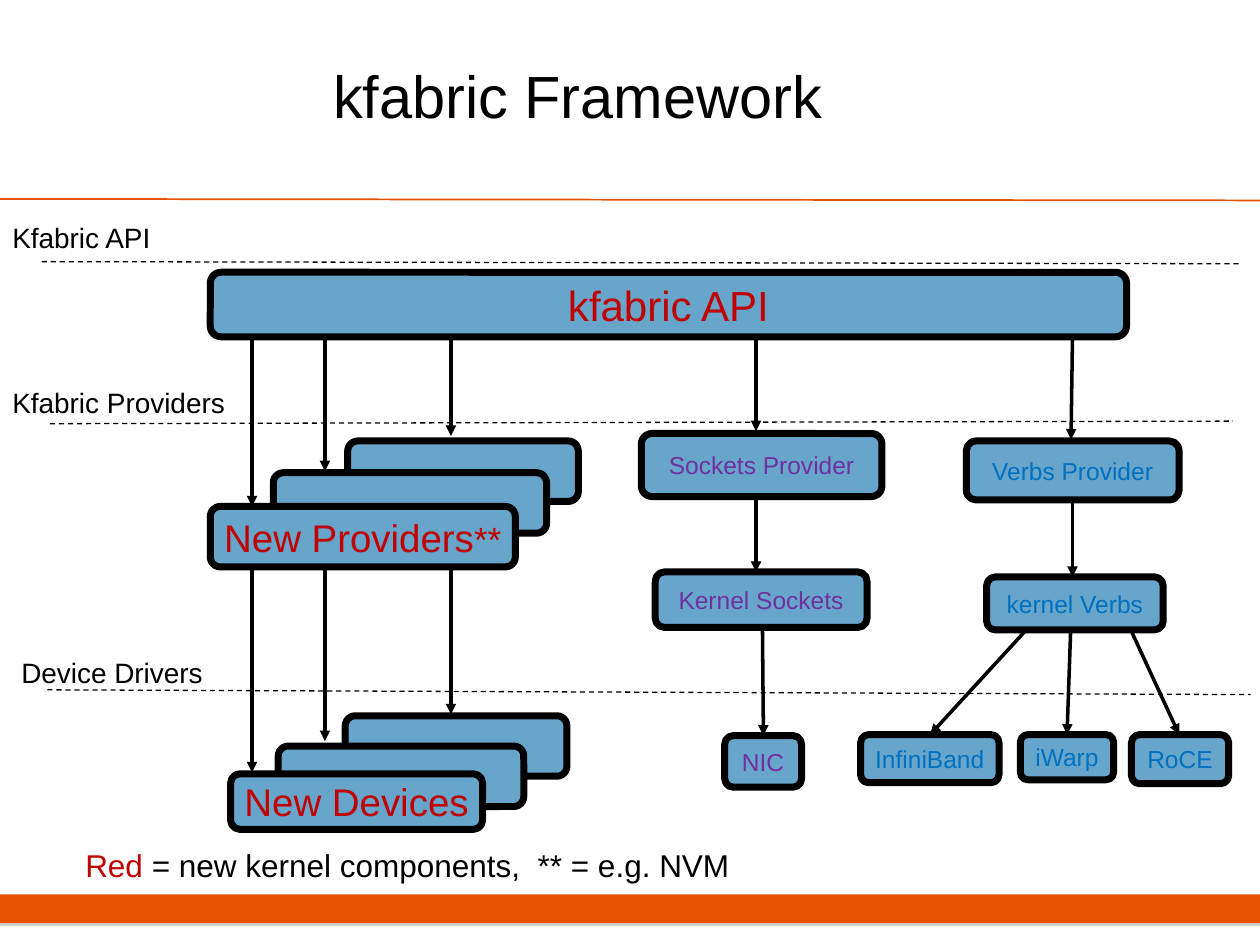
from typing import NamedTuple

from lxml.etree import SubElement as Sub
from pptx import Presentation
from pptx.dml.color import RGBColor as Rgb
from pptx.enum.dml import MSO_LINE as Dash
from pptx.enum.shapes import MSO_CONNECTOR as Conn, MSO_SHAPE as Geo
from pptx.enum.text import MSO_ANCHOR as Anchor, PP_ALIGN as Align
from pptx.oxml.ns import qn
from pptx.util import Cm, Pt

COLORS = {
    "orange": "E55302", "blue": "67A5CB", "black": "000000", "gray": "808080",
    "red": "C00000", "purple": "7030A0", "azure": "0070C0",
}


class Run(NamedTuple):
    text: str
    size: float
    color: str = "black"


class Box(NamedTuple):
    left: float
    top: float
    width: float
    height: float
    runs: tuple[Run, ...] = ()


class Arrow(NamedTuple):
    x1: float
    y1: float
    x2: float
    y2: float


class Layer(NamedTuple):
    text: str
    left: float
    top: float
    width: float
    height: float
    ends: tuple[float, ...]  # y1, x1, y2, x2 as shares of the label size


API_END = 6.78
BACK_H = 1.22
NIC_TOP = 14.81

LAYERS = [
    Layer("Kfabric API", 0, 4.5, 3.45, 0.56, (1.384, 0.244, 1.461, 7.258)),
    Layer("Kfabric Providers", 0, 7.9, 5.31, 0.43, (1.495, 0.19, 1.373, 4.681)),
    Layer("Device Drivers", 0.18, 13.34, 4.67, 0.43, (1.32, 0.166, 1.542, 5.36)),
]

BOXES = [
    Box(4.24, 5.49, 18.47, 1.3, (Run("kfabric API", 24, "red"),)),
    # New providers, back to front
    Box(7.01, 8.89, 4.65, BACK_H),
    Box(5.51, 9.53, 5.51, BACK_H),
    Box(4.24, 10.21, 6.15, BACK_H,
        (Run("New Providers", 22, "red"), Run("**", 20, "red"))),
    # New devices, back to front
    Box(6.96, 14.43, 4.47, BACK_H),
    Box(5.61, 15.04, 4.95, BACK_H),
    Box(4.65, 15.6, 5.08, 1.12, (Run("New Devices", 22, "red"),)),
    # Sockets stack
    Box(12.93, 8.74, 4.85, 1.27, (Run("Sockets Provider", 14, "purple"),)),
    Box(13.21, 11.53, 4.27, 1.12, (Run("Kernel Sockets", 14, "purple"),)),
    Box(14.61, 14.83, 1.55, 1.04, (Run("NIC", 14, "purple"),)),
    # Verbs stack
    Box(19.48, 8.89, 4.29, 1.19, (Run("Verbs Provider", 14, "azure"),)),
    Box(19.89, 11.63, 3.56, 1.07, (Run("kernel Verbs", 14, "azure"),)),
    Box(17.35, NIC_TOP, 2.79, 0.97, (Run("InfiniBand", 14, "azure"),)),
    Box(20.57, NIC_TOP, 1.88, 0.91, (Run("iWarp", 14, "azure"),)),
    Box(22.81, NIC_TOP, 1.96, 0.99, (Run("RoCE", 14, "azure"),)),
]

ARROWS = [
    # API to new providers
    Arrow(5.08, API_END, 5.08, 10.21),
    Arrow(6.55, API_END, 6.55, 9.5),
    Arrow(9.09, API_END, 9.09, 8.79),
    # New providers to new devices
    Arrow(5.08, 11.43, 5.08, 15.57),
    Arrow(6.55, 11.43, 6.55, 14.94),
    Arrow(9.09, 11.43, 9.09, 14.4),
    # Sockets stack
    Arrow(15.24, API_END, 15.24, 8.69),
    Arrow(15.24, 10.01, 15.24, 11.53),
    Arrow(15.37, 12.65, 15.39, 14.83),
    # Verbs stack
    Arrow(21.62, API_END, 21.59, 8.86),
    Arrow(21.62, 10.08, 21.62, 11.63),
    Arrow(21.67, 11.63, 18.75, NIC_TOP),
    Arrow(21.62, 11.63, 21.51, NIC_TOP),
    Arrow(22.81, 12.73, 23.77, NIC_TOP),
]


def rgb(name: str) -> Rgb:
    return Rgb.from_string(COLORS[name])


def write(frame, runs: tuple[Run, ...], align=Align.LEFT) -> None:
    para = frame.paragraphs[0]
    para.alignment = align
    for item in runs:
        run = para.add_run()
        run.text = item.text
        run.font.name = "Arial"
        run.font.size = Pt(item.size)
        run.font.color.rgb = rgb(item.color)


def add_shape(slide, geo, left: float, top: float, width: float, height: float):
    shape = slide.shapes.add_shape(geo, Cm(left), Cm(top), Cm(width), Cm(height))
    shape.shadow.inherit = False
    return shape


def add_line(slide, arrow: Arrow, color: str, width: float):
    line = slide.shapes.add_connector(Conn.STRAIGHT, *map(Cm, arrow))
    line.line.color.rgb = rgb(color)
    line.line.width = Pt(width)
    Sub(line._element.spPr, qn("a:effectLst"))
    return line


def add_arrow(slide, arrow: Arrow) -> None:
    line = add_line(slide, arrow, "black", 2)
    Sub(line.line._get_or_add_ln(), qn("a:tailEnd"), type="triangle")


def add_box(slide, box: Box) -> None:
    shape = add_shape(slide, Geo.ROUNDED_RECTANGLE, *box[:4])
    shape.fill.solid()
    shape.fill.fore_color.rgb = rgb("blue")
    shape.line.color.rgb = rgb("black")
    shape.line.width = Pt(4)
    frame = shape.text_frame
    frame.word_wrap = False
    frame.vertical_anchor = Anchor.MIDDLE
    write(frame, box.runs, Align.CENTER)


def add_layer(slide, layer: Layer) -> None:
    shape = add_shape(slide, Geo.LINE_CALLOUT_1_NO_BORDER, *layer[1:5])
    for i, share in enumerate(layer.ends):
        shape.adjustments[i] = share
    shape.fill.background()
    shape.line.color.rgb = rgb("black")
    shape.line.width = Pt(0.75)
    shape.line.dash_style = Dash.DASH
    shape.text_frame.vertical_anchor = Anchor.MIDDLE
    write(shape.text_frame, (Run(layer.text, 16),))


def add_bar(slide) -> None:
    bar = add_shape(slide, Geo.RECTANGLE, 0, 18.03, 25.4, 0.58)
    bar.fill.solid()
    bar.fill.fore_color.rgb = rgb("orange")
    bar.line.fill.background()
    effects = bar._element.spPr.find(qn("a:effectLst"))
    shadow = Sub(effects, qn("a:outerShdw"), dist=str(Pt(1.8)),
                 dir="5400000", rotWithShape="0")
    tint = Sub(shadow, qn("a:srgbClr"), val=COLORS["gray"])
    Sub(tint, qn("a:alpha"), val="35000")


def main() -> None:
    deck = Presentation()
    deck.slide_width, deck.slide_height = Cm(25.4), Cm(19.05)
    slide = deck.slides.add_slide(deck.slide_layouts[5])

    # Title, rule and footer bar
    add_bar(slide)
    add_line(slide, Arrow(0, 4.01, 25.4, 4.04), "orange", 1)
    title = slide.shapes.title
    title.left, title.top = Cm(1.27), Cm(0.64)
    title.width, title.height = Cm(20.75), Cm(2.54)
    title.text_frame.vertical_anchor = Anchor.MIDDLE
    write(title.text_frame, (Run("kfabric Framework", 34),), Align.CENTER)

    # Diagram
    for layer in LAYERS:
        add_layer(slide, layer)
    for arrow in ARROWS:
        add_arrow(slide, arrow)
    for box in BOXES:
        add_box(slide, box)

    # Key
    key = slide.shapes.add_textbox(Cm(1.47), Cm(16.94), Cm(13.97), Cm(1.02))
    key.text_frame.word_wrap = True
    write(key.text_frame, (
        Run("Red", 18, "red"),
        Run(" = new kernel components,  ** = e.g. NVM", 18),
    ))

    deck.save("out.pptx")


if __name__ == "__main__":
    main()
